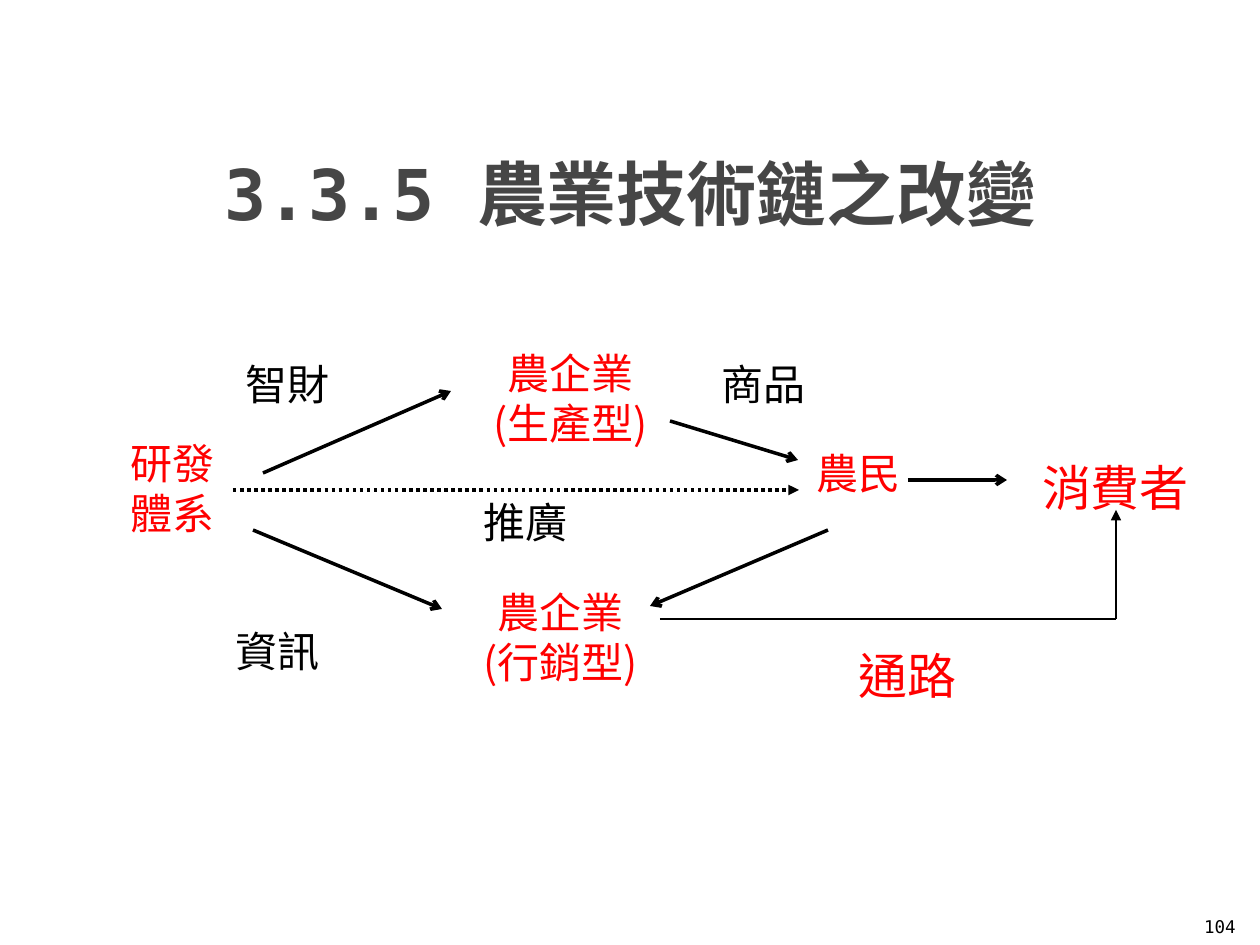
from lxml.etree import SubElement
from pptx import Presentation
from pptx.dml.color import RGBColor
from pptx.enum.dml import MSO_LINE_DASH_STYLE as Dash
from pptx.enum.shapes import MSO_CONNECTOR_TYPE as ConnectorType
from pptx.enum.text import MSO_ANCHOR as Anchor, MSO_AUTO_SIZE as AutoSize, PP_ALIGN as Align
from pptx.oxml.ns import qn
from pptx.util import Emu, Pt

PX = 914400 / 126
COLORS = {"title": "464646", "actor": "FF0000", "ink": "000000"}
MONO, CJK = "DejaVu Sans Mono", "Noto Sans CJK SC"

STYLES = {
    "title": {"size": Pt(40), "name": MONO, "bold": True},
    "number": {"size": Pt(10), "name": MONO},
    "label": {"size": Pt(24), "name": CJK},
    "large": {"size": Pt(28), "name": CJK},
}

ACTORS = [
    (["研發", "體系"], 0, 90, 217, 115, "label"),
    (["農企業", "(生產型)"], 358, 0, 297, 115, "label"),
    (["農民"], 686, 100, 217, 63, "label"),
    (["消費者"], 943, 110, 217, 72, "large"),
    (["通路"], 735, 298, 217, 72, "large"),
    (["農企業", "(行銷型)"], 348, 239, 297, 115, "label"),
]
FLOW_LABELS = [
    ("智財", 169, 11, 147),
    ("資訊", 159, 278, 129),
    ("商品", 645, 11, 147),
    ("推廣", 407, 149, 147),
]
FLOWS = [
    (199, 132, 387, 50),
    (844, 139, 943, 139),
    (606, 80, 734, 119),
    (764, 189, 586, 265),
    (189, 189, 378, 268),
]
EXTENSION = (169, 149, 735, 149)
CHANNEL = [(596, 278), (1052, 278), (1052, 169)]


def px(*values):
    return [Emu(round(value * PX)) for value in values]


def set_format(target, values):
    for name, value in values.items():
        setattr(target, name, value)


def add_text(slide, lines, box, style, color, align=Align.CENTER, **frame_format):
    shape = slide.shapes.add_textbox(*px(*box))
    frame = shape.text_frame
    set_format(frame, {"word_wrap": True, **frame_format})
    for index, line in enumerate(lines):
        paragraph = frame.add_paragraph() if index else frame.paragraphs[0]
        paragraph.alignment = align
        run = paragraph.add_run()
        run.text = line
        set_format(run.font, STYLES[style])
        run.font.color.rgb = RGBColor.from_string(COLORS[color])
        properties = run.font._element
        properties.set("lang", "zh-TW")
        SubElement(properties, qn("a:ea")).set("typeface", CJK)


def add_line(slide, box, ends, width, head=None, dash=None):
    left, top = box[:2]
    x1, y1, x2, y2 = ends
    points = px(left + x1, top + y1, left + x2, top + y2)
    connector = slide.shapes.add_connector(ConnectorType.STRAIGHT, *points)
    line = connector.line
    line.color.rgb = RGBColor.from_string(COLORS["ink"])
    line.width = Pt(width)
    if dash:
        line.dash_style = dash
    if head:
        SubElement(line._get_or_add_ln(), qn("a:tailEnd")).set("type", head)
    SubElement(connector._element.spPr, qn("a:effectLst"))


def add_title(slide, box):
    add_text(slide, ["3.3.5 農業技術鏈之改變"], box, "title", "title", vertical_anchor=Anchor.MIDDLE)


def add_page_number(slide, box):
    add_text(slide, ["104"], box, "number", "ink", vertical_anchor=Anchor.MIDDLE)


def add_technology_chain(slide, box):
    left, top = box[:2]
    grow = {"auto_size": AutoSize.SHAPE_TO_FIT_TEXT}
    for lines, x, y, width, height, style in ACTORS:
        add_text(slide, lines, (left + x, top + y, width, height), style, "actor", **grow)
    for label, x, y, width in FLOW_LABELS:
        add_text(slide, [label], (left + x, top + y, width, 63), "label", "ink", Align.LEFT, **grow)
    for ends in FLOWS:
        add_line(slide, box, ends, 2, "arrow")
    add_line(slide, box, EXTENSION, 2, "triangle", Dash.ROUND_DOT)
    start, corner, end = CHANNEL
    add_line(slide, box, start + corner, 0.75)
    add_line(slide, box, corner + end, 0.75, "triangle")


def main():
    presentation = Presentation()
    presentation.slide_width, presentation.slide_height = px(1260, 945)
    slide = presentation.slides.add_slide(presentation.slide_layouts[6])
    add_title(slide, (25, 123, 1211, 140))
    add_technology_chain(slide, (64, 341, 1160, 370))
    add_page_number(slide, (1186, 908, 68, 37))
    presentation.save("out.pptx")


if __name__ == "__main__":
    main()
